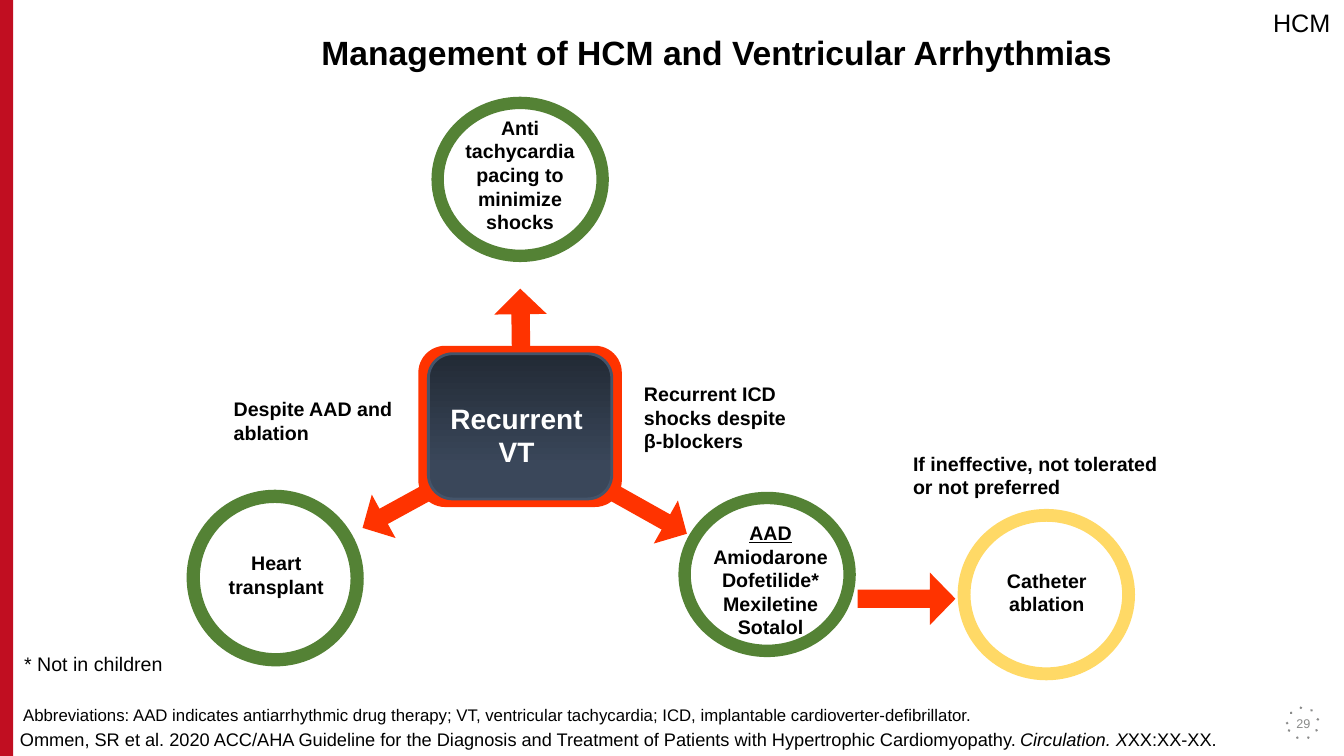
from lxml import etree
from pptx import Presentation
from pptx.dml.color import RGBColor
from pptx.enum.shapes import MSO_SHAPE
from pptx.enum.text import MSO_ANCHOR, PP_ALIGN
from pptx.oxml.ns import qn
from pptx.util import Pt

RECTANGLE, ELLIPSE = MSO_SHAPE.RECTANGLE, MSO_SHAPE.OVAL
DONUT, ARROW, ROUNDED = MSO_SHAPE.DONUT, MSO_SHAPE.RIGHT_ARROW, MSO_SHAPE.ROUNDED_RECTANGLE
LEFT, CENTER = PP_ALIGN.LEFT, PP_ALIGN.CENTER
TOP, MIDDLE = MSO_ANCHOR.TOP, MSO_ANCHOR.MIDDLE

COLORS = {
    "bar": "C10E21", "gray": "8A8B8A", "arrow": "FF3300", "green": "548235",
    "yellow": "FFD966", "navy": "222A35", "slate": "3A475A", "edge": "44546A",
    "black": "000000", "white": "FFFFFF",
}
BOLD = {"bold": True}


class SlideBuilder:
    """Draws styled elements on the current slide, with lengths in points."""

    def __init__(self, slide, font_name="Arial"):
        self.slide = slide
        self.font_name = font_name

    def color(self, name):
        return RGBColor.from_string(COLORS[name])

    def shape(self, kind, box, fill=None, rotation=0, adjustments=()):
        shape = self.slide.shapes.add_shape(kind, *map(Pt, box))
        shape.shadow.inherit = False
        shape.rotation = rotation
        for index, value in enumerate(adjustments):
            shape.adjustments[index] = value
        if fill:
            shape.fill.solid()
            shape.fill.fore_color.rgb = self.color(fill)
        else:
            shape.fill.background()
        shape.line.fill.background()
        return shape

    def outline(self, shape, color, width):
        shape.line.color.rgb = self.color(color)
        shape.line.width = Pt(width)

    def arrow(self, box, rotation=0):
        return self.shape(ARROW, box, "arrow", rotation, (0.352, 0.487))

    def ring(self, box, color, rotation=0):
        return self.shape(DONUT, box, color, rotation, (0.075,))

    def dotted_circle(self, box):
        circle = self.shape(ELLIPSE, box)
        self.outline(circle, "gray", 2)
        line = circle.line.fill._xPr
        line.set("cap", "rnd")
        etree.SubElement(line, qn("a:prstDash")).set("val", "dot")

    def gradient_box(self, box, first, last, end):
        shape = self.shape(ROUNDED, box)
        shape.fill.gradient()
        shape.fill.gradient_angle = 270
        for stop, name, position in zip(shape.fill.gradient_stops, (first, last), (0, end)):
            stop.color.rgb = self.color(name)
            stop.position = position
        self.outline(shape, "edge", 2)

    def text(self, box, paragraphs, size=14, align=LEFT, color="black",
             anchor=TOP, insets=(7.2, 3.6)):
        frame = self.slide.shapes.add_textbox(*map(Pt, box)).text_frame
        frame.word_wrap = True
        frame.vertical_anchor = anchor
        frame.margin_left = frame.margin_right = Pt(insets[0])
        frame.margin_top = frame.margin_bottom = Pt(insets[1])
        for index, runs in enumerate(paragraphs):
            paragraph = frame.add_paragraph() if index else frame.paragraphs[0]
            paragraph.alignment = align
            for words, formats in runs:
                run = paragraph.add_run()
                run.text = words
                run.font.color.rgb = self.color(color)
                values = {"name": self.font_name, "size": Pt(size), **formats}
                for attribute, value in values.items():
                    setattr(run.font, attribute, value)

    def label(self, box, lines, align=LEFT, size=14, color="black"):
        self.text(box, [[(line, BOLD)] for line in lines], size, align, color)


def main():
    presentation = Presentation()
    presentation.slide_width, presentation.slide_height = Pt(960), Pt(540)
    slide = presentation.slides.add_slide(presentation.slide_layouts[6])
    builder = SlideBuilder(slide)

    builder.shape(RECTANGLE, (0, 0, 9.4, 540), "bar")
    builder.dotted_circle((919.4, 505.4, 22.3, 22.3))
    builder.text((902.2, 2, 57.8, 29), [[("HCM", {})]], 18)

    for box, rotation in (
        ((351.4, 208, 41, 37.4), 269.3),
        ((432.7, 348.5, 61.9, 35.3), 29.3),
        ((255.6, 346.3, 54.7, 35.3), 151.3),
        ((612.7, 409, 69.8, 37.4), 0),
    ):
        builder.arrow(box, rotation)
    for box, color, rotation in (
        ((308.2, 69.1, 126.7, 118.1), "green", 0),
        ((488.9, 347, 118.1, 126.7), "green", 90),
        ((133.2, 349.9, 126.7, 126), "green", 210),
        ((686.2, 361.4, 122.4, 126.7), "yellow", 90),
    ):
        builder.ring(box, color, rotation)

    builder.shape(ROUNDED, (298.8, 247, 145.4, 115.2), "arrow")
    builder.gradient_box((306, 252.7, 131, 103.7), "navy", "slate", 0.77)

    builder.label((176.4, 19.4, 671, 60.5),
                  ["Management of HCM and Ventricular Arrhythmias"], CENTER, 24)
    builder.label((310.3, 283, 117.4, 51.8), ["Recurrent VT"], CENTER, 20, "white")
    for box, lines, align in (
        ((320.4, 79.2, 102.2, 85.7), ["Anti tachycardia pacing to minimize shocks"], CENTER),
        ((147.6, 390.2, 99.4, 74.9), ["Heart transplant"], CENTER),
        ((697, 402.5, 101.5, 58.3), ["Catheter ablation"], CENTER),
        ((159.8, 280, 133.2, 41), ["Despite AAD and ablation"], LEFT),
        ((452.9, 269.3, 133.2, 74.9), ["Recurrent ICD shocks despite", "β-blockers"], LEFT),
        ((645.1, 319, 191.5, 41), ["If ineffective, not tolerated or not preferred"], LEFT),
    ):
        builder.label(box, lines, align)

    drugs = ["Amiodarone", "Dofetilide*", "Mexiletine", "Sotalol"]
    builder.text((499.7, 368.6, 101.5, 101.5),
                 [[("AAD", {"bold": True, "underline": True})]]
                 + [[(drug, BOLD)] for drug in drugs], align=CENTER)

    builder.text((10.1, 462.2, 118, 24.5), [[("* Not in children", {})]])
    builder.text((9.4, 499.7, 913, 21.6), [[(
        "Abbreviations: AAD indicates antiarrhythmic drug therapy; VT, ventricular "
        "tachycardia; ICD, implantable cardioverter-defibrillator.", {})]], 12)
    builder.text((7.2, 517, 940.3, 23), [[
        ("Ommen, SR et al. 2020 ACC/AHA Guideline for the Diagnosis and Treatment of "
         "Patients with Hypertrophic Cardiomyopathy. ", {}),
        ("Circulation. X", {"italic": True}),
        ("XX:XX-XX.", {}),
    ]], 13)
    builder.text((915.1, 502.6, 31.7, 28.1), [[("29", {})]], 9, CENTER, "gray",
                 MIDDLE, (8.6, 4.3))

    presentation.save("out.pptx")


if __name__ == "__main__":
    main()
